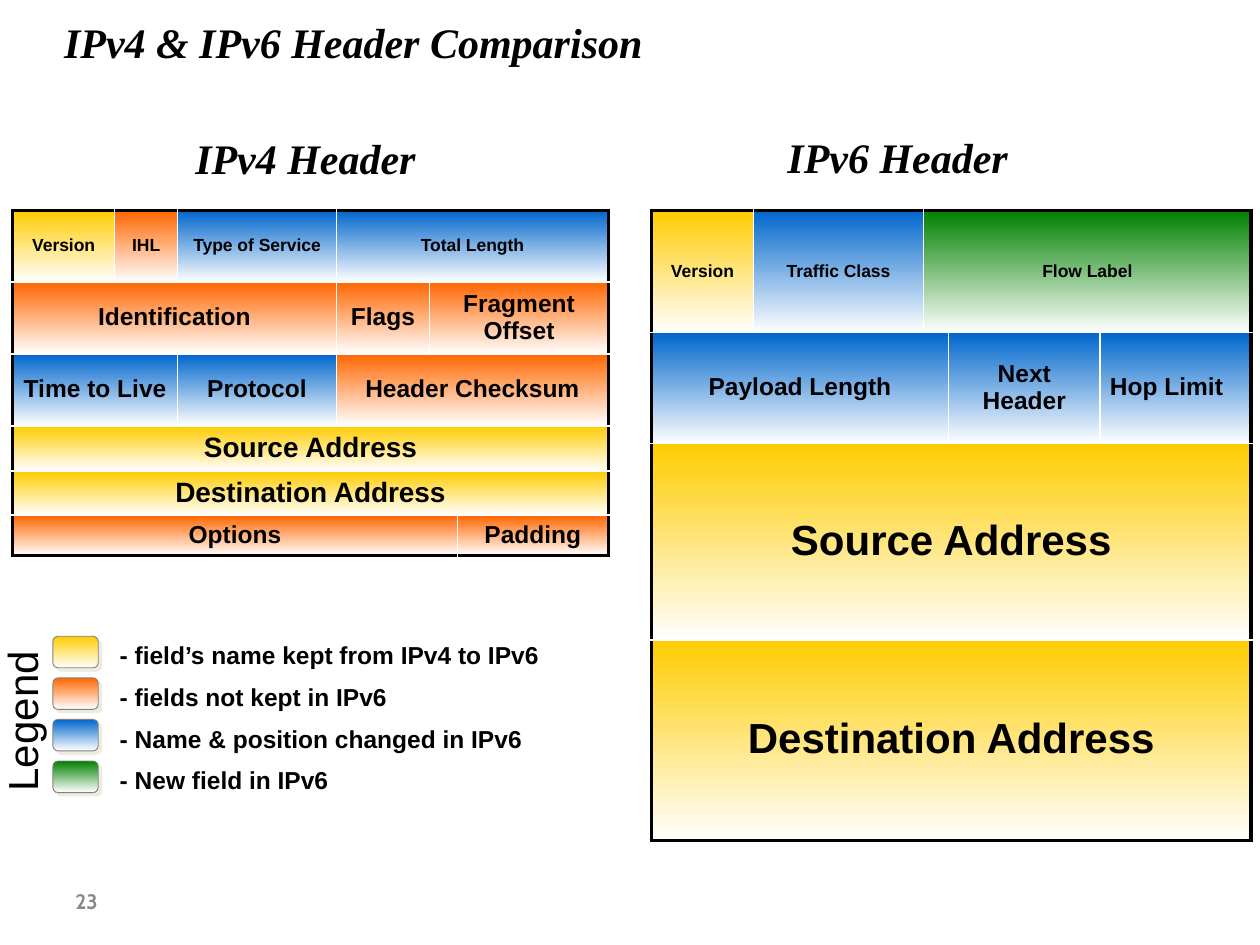
from lxml import etree
from pptx import Presentation
from pptx.dml.color import RGBColor
from pptx.enum.shapes import MSO_SHAPE
from pptx.enum.text import MSO_ANCHOR, PP_ALIGN
from pptx.oxml import parse_xml
from pptx.oxml.ns import nsdecls, qn
from pptx.util import Inches, Pt

ROUNDED = MSO_SHAPE.ROUNDED_RECTANGLE
MIDDLE, TOP = MSO_ANCHOR.MIDDLE, MSO_ANCHOR.TOP
CENTER, LEFT = PP_ALIGN.CENTER, PP_ALIGN.LEFT

BLACK = RGBColor(0x00, 0x00, 0x00)
WHITE = RGBColor(0xFF, 0xFF, 0xFF)
GRAY = RGBColor(0x80, 0x80, 0x80)
PAGE_GRAY = RGBColor(0x89, 0x89, 0x89)
SHADOW = RGBColor(0xEE, 0xEC, 0xE1)
KEPT = RGBColor(0xFF, 0xCC, 0x00)
DROPPED = RGBColor(0xFF, 0x66, 0x00)
CHANGED = RGBColor(0x00, 0x66, 0xCC)
NEW = RGBColor(0x00, 0x80, 0x00)

# The layout grid: 100 columns by 75 rows over the slide
COLUMNS, ROWS = 100, 75
BODY, HEADING, PAGE_FONT = "Arial", "Times New Roman", "Cabin"


class HeaderSlide:
    def __init__(self, prs):
        self.slide = prs.slides.add_slide(prs.slide_layouts[6])
        self.column = prs.slide_width / COLUMNS
        self.row = prs.slide_height / ROWS

    def box(self, x, y, w, h):
        return (round(x * self.column), round(y * self.row),
                round(w * self.column), round(h * self.row))

    def fade(self, fill, color):
        """Top-down gradient from the colour to white."""
        fill.gradient()
        fill.gradient_angle = 270
        for stop, rgb in zip(fill.gradient_stops, (color, WHITE)):
            stop.color.rgb = rgb

    def add_text_run(self, paragraph, text, size, font=BODY, color=BLACK,
                     bold=True, italic=False):
        run = paragraph.add_run()
        run.text = text
        run.font.size, run.font.name = Pt(size), font
        run.font.bold, run.font.italic = bold, italic
        run.font.color.rgb = color

    def text(self, area, lines, size, inset=(0.08, 0.04), anchor=TOP,
             spacing=1.0, wrap=True, rotation=0, **style):
        box = self.slide.shapes.add_textbox(*self.box(*area))
        box.rotation = rotation
        frame = box.text_frame
        frame.word_wrap, frame.vertical_anchor = wrap, anchor
        frame.margin_left = frame.margin_right = Inches(inset[0])
        frame.margin_top = frame.margin_bottom = Inches(inset[1])
        for i, line in enumerate(lines):
            paragraph = frame.add_paragraph() if i else frame.paragraphs[0]
            paragraph.line_spacing = spacing
            if i:
                paragraph.space_before = Pt(size / 2 + 0.8)
            self.add_text_run(paragraph, line, size, **style)

    def heading(self, area, text, **options):
        self.text(area, [text], 24, font=HEADING, italic=True, **options)

    def swatch(self, area, color):
        shape = self.slide.shapes.add_shape(ROUNDED, *self.box(*area))
        self.fade(shape.fill, color)
        shape.line.color.rgb, shape.line.width = GRAY, Pt(0.5)
        shape.shadow.inherit = False
        effects = shape._element.spPr.find(qn("a:effectLst"))
        effects.append(parse_xml(
            f'<a:outerShdw {nsdecls("a")} dist="{Pt(2.8)}" dir="2700000">'
            f'<a:srgbClr val="{SHADOW}"/></a:outerShdw>'))

    def borders(self, cell, edges):
        """Thick black on the outer edges, thin white inside."""
        props = cell._tc.get_or_add_tcPr()
        for i, (side, outer) in enumerate(edges):
            color, width = (BLACK, 2.25) if outer else (WHITE, 1)
            line = etree.Element(qn(f"a:ln{side}"), w=str(Pt(width)))
            solid = etree.SubElement(line, qn("a:solidFill"))
            etree.SubElement(solid, qn("a:srgbClr"), val=str(color))
            props.insert(i, line)

    def header_table(self, x, y, widths, rows):
        """Each row is (height, text size, [(label, colour, span), ...])."""
        heights = [height for height, _, _ in rows]
        area = self.box(x, y, sum(widths), sum(heights))
        table = self.slide.shapes.add_table(len(rows), len(widths), *area).table
        table.first_row = table.horz_banding = False
        for column, width in zip(table.columns, widths):
            column.width = round(width * self.column)
        last_row, last_col = len(rows) - 1, len(widths) - 1
        for r, (height, size, fields) in enumerate(rows):
            table.rows[r].height = round(height * self.row)
            start = 0
            for label, color, span in fields:
                end = start + span - 1
                if span > 1:
                    table.cell(r, start).merge(table.cell(r, end))
                for c in range(start, end + 1):
                    cell = table.cell(r, c)
                    self.fade(cell.fill, color)
                    edges = [("L", start == 0), ("R", end == last_col),
                             ("T", r == 0), ("B", r == last_row)]
                    shown = {"T", "B"}
                    if c == start:
                        shown |= {"L", "R"}
                    elif c == end:
                        shown.add("R")
                    self.borders(cell, [e for e in edges if e[0] in shown])
                self.field(table.cell(r, start), label, size)
                start = end + 1
        return table

    def field(self, cell, label, size):
        cell.vertical_anchor = MIDDLE
        cell.margin_left = cell.margin_right = Inches(0.08)
        cell.margin_top = cell.margin_bottom = Inches(0.04)
        paragraph = cell.text_frame.paragraphs[0]
        paragraph.alignment, paragraph.line_spacing = CENTER, 0.95
        self.add_text_run(paragraph, label, size)


IPV4_ROWS = [
    (5.7, 10, [("Version", KEPT, 1), ("IHL", DROPPED, 1),
               ("Type of Service", CHANGED, 1), ("Total Length", CHANGED, 3)]),
    (5.7, 14, [("Identification", DROPPED, 3), ("Flags", DROPPED, 1),
               ("Fragment Offset", DROPPED, 2)]),
    (5.7, 14, [("Time to Live", CHANGED, 2), ("Protocol", CHANGED, 1),
               ("Header Checksum", DROPPED, 3)]),
    (3.6, 16, [("Source Address", KEPT, 6)]),
    (3.5, 16, [("Destination Address", KEPT, 6)]),
    (3.2, 14, [("Options", DROPPED, 5), ("Padding", DROPPED, 1)]),
]
IPV6_ROWS = [
    (9.7, 10, [("Version", KEPT, 1), ("Traffic Class", CHANGED, 1),
               ("Flow Label", NEW, 3)]),
    (8.8, 14, [("Payload Length", CHANGED, 3), ("Next Header", CHANGED, 1),
               ("Hop Limit", CHANGED, 1)]),
    (15.6, 24, [("Source Address", KEPT, 5)]),
    (15.9, 24, [("Destination Address", KEPT, 5)]),
]
LEGEND = [
    (KEPT, "- field’s name kept from IPv4 to IPv6"),
    (DROPPED, "- fields not kept in IPv6"),
    (CHANGED, "- Name & position changed in IPv6"),
    (NEW, "- New field in IPv6"),
]


def main():
    prs = Presentation()
    prs.slide_width, prs.slide_height = Inches(10), Inches(7.5)
    page = HeaderSlide(prs)

    # Page number and title
    page.text((5, 69.5, 23.3, 4), ["23"], 12, inset=(0.1, 0.05),
              anchor=MIDDLE, font=PAGE_FONT, color=PAGE_GRAY)
    page.heading((4.1, 0.8, 94.1, 7.3), "IPv4 & IPv6 Header Comparison",
                 inset=(0.1, 0.05))

    # Header layouts
    page.header_table(1, 16.7, [8.1, 5, 12.6, 7.4, 2.2, 12], IPV4_ROWS)
    ipv6 = page.header_table(51.7, 16.7, [8.1, 13.5, 1.9, 12, 12], IPV6_ROWS)
    ipv6.cell(1, 4).text_frame.paragraphs[0].alignment = LEFT
    page.heading((14.7, 10.1, 20, 4.8), "IPv4 Header", wrap=False)
    page.heading((61.7, 10, 19.3, 4.8), "IPv6 Header", wrap=False)

    # Legend
    for i, (color, _) in enumerate(LEGEND):
        page.swatch((4.2, 50.5 + 3.3 * i, 3.6, 2.5), color)
    page.text((7.5, 50.6, 37.5, 13.2), [label for _, label in LEGEND], 14,
              inset=(0.2, 0.04), spacing=0.95)
    page.text((-4.9, 54.5, 13.7, 4.7), ["Legend"], 24, inset=(0.09, 0.04),
              spacing=0.95, rotation=270, bold=False)

    prs.save("out.pptx")


if __name__ == "__main__":
    main()
